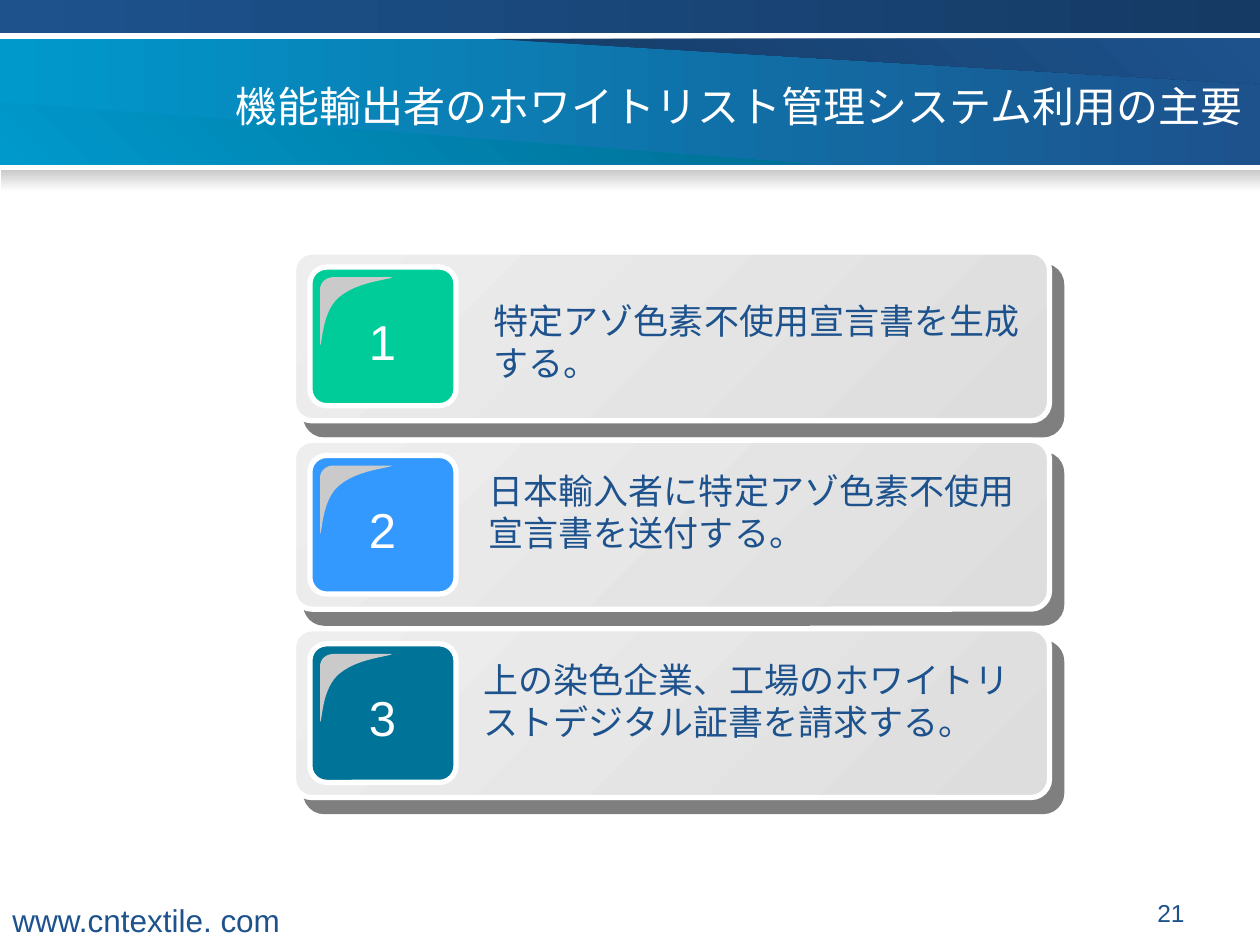
"""Build the slide on the main steps of using the exporter whitelist system."""
from lxml import etree
from pptx import Presentation
from pptx.dml.color import RGBColor
from pptx.enum.shapes import MSO_SHAPE
from pptx.enum.text import MSO_ANCHOR, PP_ALIGN
from pptx.oxml.ns import qn
from pptx.util import Inches, Pt

RECTANGLE, ROUNDED = MSO_SHAPE.RECTANGLE, MSO_SHAPE.ROUNDED_RECTANGLE
TOP, MIDDLE = MSO_ANCHOR.TOP, MSO_ANCHOR.MIDDLE
LEFT, CENTER, RIGHT = PP_ALIGN.LEFT, PP_ALIGN.CENTER, PP_ALIGN.RIGHT
LATIN, JAPANESE = "Arial", "Noto Sans CJK JP"

COLORS = {
    "white": "FFFFFF", "black": "000000", "navy": "1D528D", "deep": "153B65",
    "cyan": "0099CC", "teal": "006D92", "gray": "CACACA",
    "card_light": "EEEEEE", "card_dark": "DDDDDD",
    "green": "00CC99", "blue": "3399FF", "petrol": "007399",
}
TITLE = "機能輸出者のホワイトリスト管理システム利用の主要"
SITE = "www.cntextile. com"
PAGE = "21"
STEPS = [
    ("特定アゾ色素不使用宣言書を生成する。", "green", (3.82, 0.33, 4.41)),
    ("日本輸入者に特定アゾ色素不使用宣言書を送付する。", "blue", (3.78, 0.18, 4.41)),
    ("上の染色企業、工場のホワイトリストデジタル証書を請求する。", "petrol", (3.74, 0.19, 4.49)),
]
BANDS = [
    ((0, 0.31, 10, 1), ("cyan", "navy"), 0),
    ((0, 0, 10, 0.26), ("navy", "deep"), 0),
    ((0.01, 1.35, 9.99, 0.17), ("gray", "white"), 90),
]
WEDGES = [
    ([(3.93, 0.31), (10, 0.67), (10, 0.31)], ("deep", "navy"), 315),
    ([(0, 0.81), (6.43, 1.3), (0, 1.3)], ("cyan", "teal"), 315),
]
GLOSS_START = (0.11, 0)
GLOSS_CURVES = [
    [(0.11, 0), (0.05, 0), (0, 0.04), (0, 0.1)],
    [(0, 0.54), (0.02, 0.54), (0.01, 0.28), (0.15, 0.16)],
    [(0.15, 0.16), (0.3, 0.03), (0.57, 0.02), (0.57, 0)],
]
FIRST_TOP, LAST_TOP = 2, 4.99
CURVE_STEPS = 12


def color(name):
    return RGBColor.from_string(COLORS[name])


def paint(shape, fill, angle=0, line=None):
    shape.shadow.inherit = False
    if isinstance(fill, tuple):
        shape.fill.gradient()
        shape.fill.gradient_angle = (360 - angle) % 360
        for stop, name in zip(shape.fill.gradient_stops, fill):
            stop.color.rgb = color(name)
    else:
        shape.fill.solid()
        shape.fill.fore_color.rgb = color(fill)
    if line:
        shape.line.color.rgb = color(line)
        shape.line.width = Pt(3)
    else:
        shape.line.fill.background()


def add_box(slide, kind, box, fill, angle=0, line=None, radius=None):
    shape = slide.shapes.add_shape(kind, *map(Inches, box))
    if radius is not None:
        shape.adjustments[0] = radius
    paint(shape, fill, angle, line)
    return shape


def add_outline(slide, points, fill, angle=0):
    corners = [(Inches(x), Inches(y)) for x, y in points]
    builder = slide.shapes.build_freeform(*corners[0])
    builder.add_line_segments(corners[1:], close=True)
    paint(builder.convert_to_shape(), fill, angle)


def add_text(slide, text, box, size, font=LATIN, ink="navy", align=LEFT, anchor=TOP, wrap=True):
    frame = slide.shapes.add_textbox(*map(Inches, box)).text_frame
    frame.word_wrap = wrap
    frame.vertical_anchor = anchor
    paragraph = frame.paragraphs[0]
    paragraph.alignment = align
    run = paragraph.add_run()
    run.text = text
    run.font.size = Pt(size)
    run.font.color.rgb = color(ink)
    run.font.name = font
    etree.SubElement(run._r.get_or_add_rPr(), qn("a:ea"), typeface=font)


def add_shadow(shape):
    effects = shape._element.spPr.find(qn("a:effectLst"))
    shadow = etree.SubElement(effects, qn("a:outerShdw"), blurRad="0", dist=str(Pt(10.6)),
                              dir=str(49 * 60000), algn="ctr", rotWithShape="0")
    tone = etree.SubElement(shadow, qn("a:srgbClr"), val=COLORS["black"])
    etree.SubElement(tone, qn("a:alpha"), val="50000")


def curve_points(curve):
    for step in range(CURVE_STEPS + 1):
        t = step / CURVE_STEPS
        weights = ((1 - t) ** 3, 3 * t * (1 - t) ** 2, 3 * t ** 2 * (1 - t), t ** 3)
        yield tuple(sum(w * point[axis] for w, point in zip(weights, curve)) for axis in (0, 1))


def add_step(slide, number, top, text, badge, text_place):
    card = add_box(slide, ROUNDED, (2.33, top, 6, 1.34), ("card_light", "card_dark"), 45, "white", 0.11)
    add_shadow(card)
    add_box(slide, ROUNDED, (2.46, top + 0.12, 1.16, 1.1), badge, line="white", radius=0.12)
    gloss = [GLOSS_START] + [point for curve in GLOSS_CURVES for point in curve_points(curve)]
    add_outline(slide, [(2.54 + x, top + 0.2 + y) for x, y in gloss], "gray")
    add_text(slide, str(number), (2.82, top + 0.42, 0.43, 0.57), 28,
             ink="white", align=CENTER, wrap=False)
    left, offset, width = text_place
    add_text(slide, text, (left, top + offset, width, 0.77), 20, JAPANESE)


def main():
    presentation = Presentation()
    presentation.slide_width, presentation.slide_height = Inches(10), Inches(7.5)
    slide = presentation.slides.add_slide(presentation.slide_layouts[6])
    for box, fill, angle in BANDS:
        add_box(slide, RECTANGLE, box, fill, angle)
    for points, fill, angle in WEDGES:
        add_outline(slide, points, fill, angle)
    add_text(slide, TITLE, (1.77, 0.36, 8.23, 0.95), 24, JAPANESE, "white", anchor=MIDDLE)
    pitch = (LAST_TOP - FIRST_TOP) / (len(STEPS) - 1)
    for index, step in enumerate(STEPS):
        add_step(slide, index + 1, FIRST_TOP + index * pitch, *step)
    add_text(slide, SITE, (0, 7.1, 2.34, 0.4), 18, wrap=False)
    add_text(slide, PAGE, (7.17, 7.08, 2.33, 0.27), 14, align=RIGHT)
    presentation.save("out.pptx")


if __name__ == "__main__":
    main()
